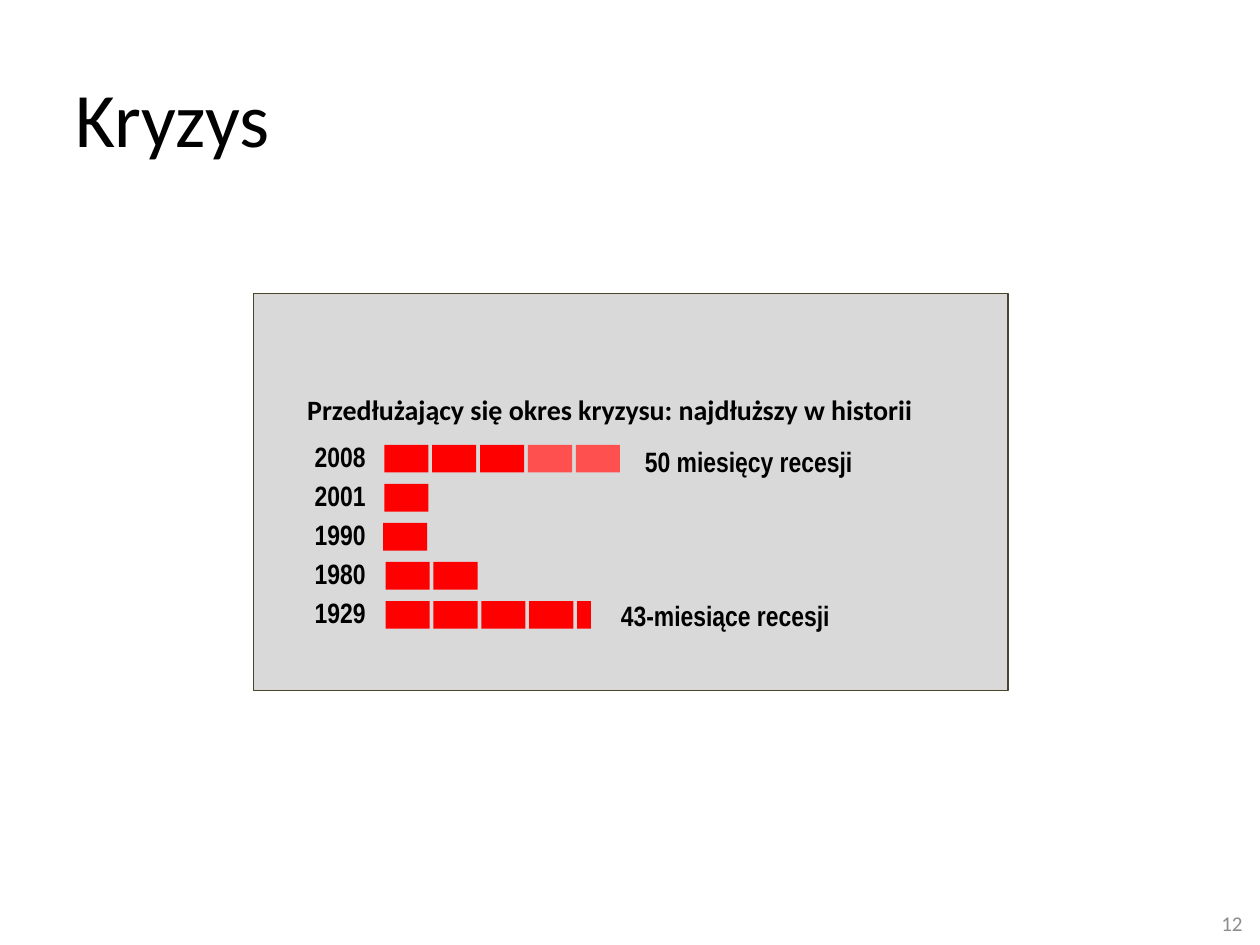
import pptx
import pptx.util
import pptx.dml.color
import pptx.enum.shapes
import pptx.enum.text

Inches = pptx.util.Inches
ALIGN = pptx.enum.text.PP_ALIGN
ANCHOR = pptx.enum.text.MSO_ANCHOR

TITLE = "Kryzys"
PAGE_NUMBER = "12"
HEADING = "Przedłużający się okres kryzysu: najdłuższy w historii"
# year, bar start, widths of dark blocks, number of pale blocks
BLOCK = 0.35
RECESSIONS = [
    ("2008", 3.05, [BLOCK] * 3, 2),
    ("2001", 3.05, [BLOCK], 0),
    ("1990", 3.04, [BLOCK], 0),
    ("1980", 3.06, [BLOCK] * 2, 0),
    ("1929", 3.06, [BLOCK] * 4 + [0.11], 0),
]
# text, left, top, width
DURATIONS = [
    ("50 miesięcy recesji", 5.02, 3.48, 1.86),
    ("43-miesiące recesji", 4.83, 4.7, 1.87),
]
COLORS = {
    "text": "000000",
    "number": "8C8C8C",
    "panel": "D9D9D9",
    "border": "4A452A",
    "dark": "FF0000",
    "pale": "FF5050",
}
LABEL_TOP, BAR_TOP, ROW_STEP = 3.44, 3.53, 0.31
BLOCK_STEP, BLOCK_HEIGHT = 0.38, 0.22
LABEL_HEIGHT = 0.37


def color(name):
    return pptx.dml.color.RGBColor.from_string(COLORS[name])


def write(shape, text, size, font="Calibri", bold=False, align=ALIGN.LEFT,
          anchor=ANCHOR.TOP, ink="text", wrap=True):
    frame = shape.text_frame
    frame.text = text
    frame.word_wrap = wrap
    frame.vertical_anchor = anchor
    paragraph = frame.paragraphs[0]
    paragraph.alignment = align
    run_font = paragraph.runs[0].font
    run_font.name = font
    run_font.size = pptx.util.Pt(size)
    run_font.bold = bold
    run_font.color.rgb = color(ink)


def add_text(slide, box, text, size, **style):
    write(slide.shapes.add_textbox(*map(Inches, box)), text, size, **style)


def add_label(slide, box, text, align=ALIGN.LEFT):
    add_text(slide, box, text, 16, font="Arial Narrow", bold=True,
             align=align, wrap=False)


def add_rectangle(shapes, box, fill):
    rectangle = shapes.add_shape(
        pptx.enum.shapes.MSO_SHAPE.RECTANGLE, *map(Inches, box))
    rectangle.shadow.inherit = False
    rectangle.fill.solid()
    rectangle.fill.fore_color.rgb = color(fill)
    rectangle.line.fill.background()
    return rectangle


def add_recession(slide, row, year, start, dark_widths, pale_count):
    add_label(slide, (2.39, LABEL_TOP + row * ROW_STEP, 0.61, LABEL_HEIGHT),
              year, ALIGN.RIGHT)
    blocks = [(width, "dark") for width in dark_widths]
    blocks += [(BLOCK, "pale")] * pale_count
    bar = slide.shapes.add_group_shape()
    for column, (width, fill) in enumerate(blocks):
        box = (start + column * BLOCK_STEP, BAR_TOP + row * ROW_STEP,
               width, BLOCK_HEIGHT)
        add_rectangle(bar.shapes, box, fill)


def main():
    presentation = pptx.Presentation()
    presentation.slide_width = Inches(10)
    presentation.slide_height = Inches(7.5)
    slide = presentation.slides.add_slide(presentation.slide_layouts[5])

    title = slide.shapes.title
    title.left, title.top = Inches(0.5), Inches(0.3)
    title.width, title.height = Inches(9), Inches(1.25)
    write(title, TITLE, 44, anchor=ANCHOR.MIDDLE)
    add_text(slide, (7.63, 7.13, 2.33, 0.4), PAGE_NUMBER, 12,
             align=ALIGN.RIGHT, anchor=ANCHOR.MIDDLE, ink="number")

    panel = add_rectangle(slide.shapes, (2.01, 2.33, 5.99, 3.15), "panel")
    panel.line.color.rgb = color("border")
    panel.line.width = pptx.util.Pt(0.75)
    add_text(slide, (2.34, 3.07, 5.74, LABEL_HEIGHT), HEADING, 16, bold=True)

    for row, recession in enumerate(RECESSIONS):
        add_recession(slide, row, *recession)
    for text, left, top, width in DURATIONS:
        add_label(slide, (left, top, width, LABEL_HEIGHT), text)

    presentation.save("out.pptx")


if __name__ == "__main__":
    main()
